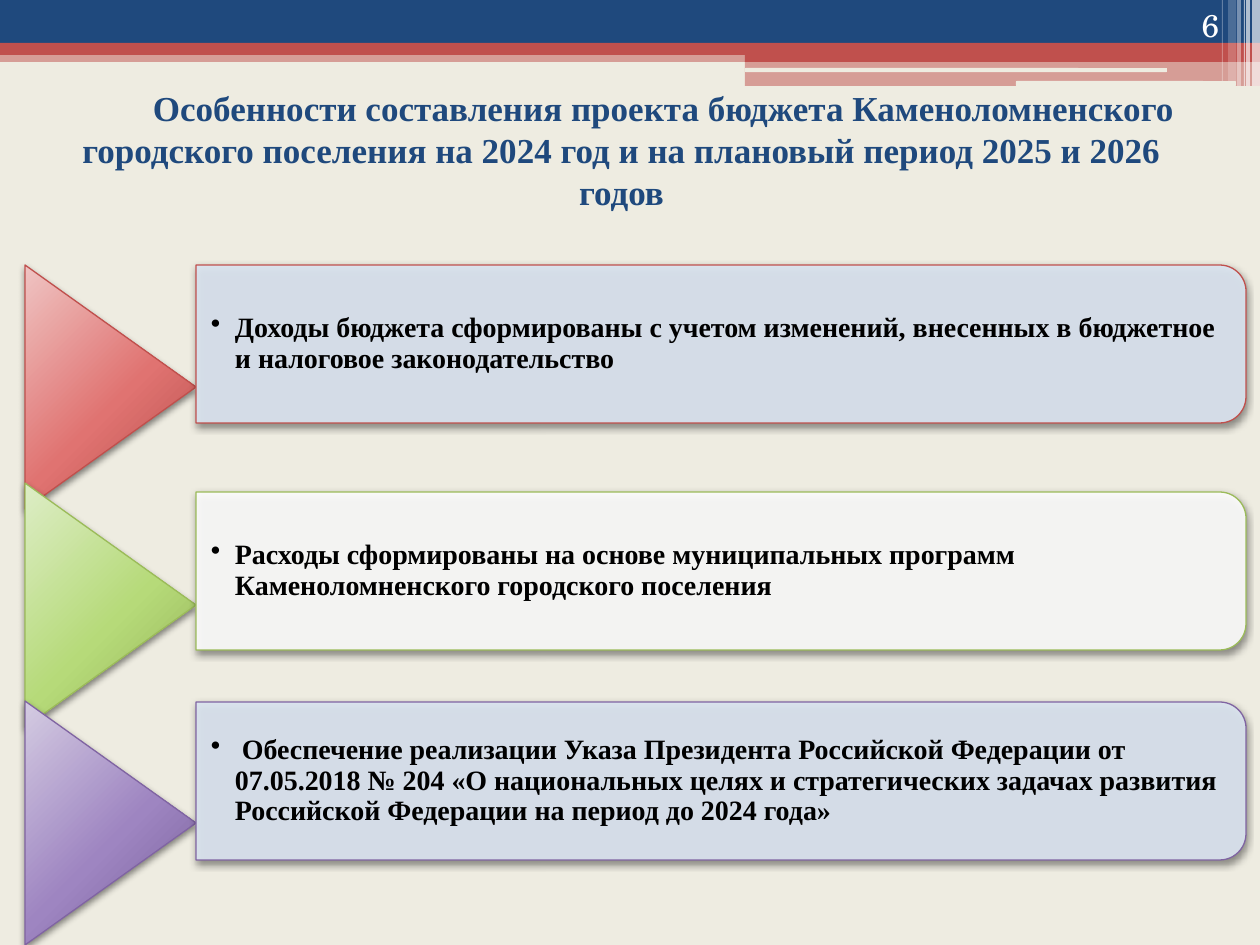
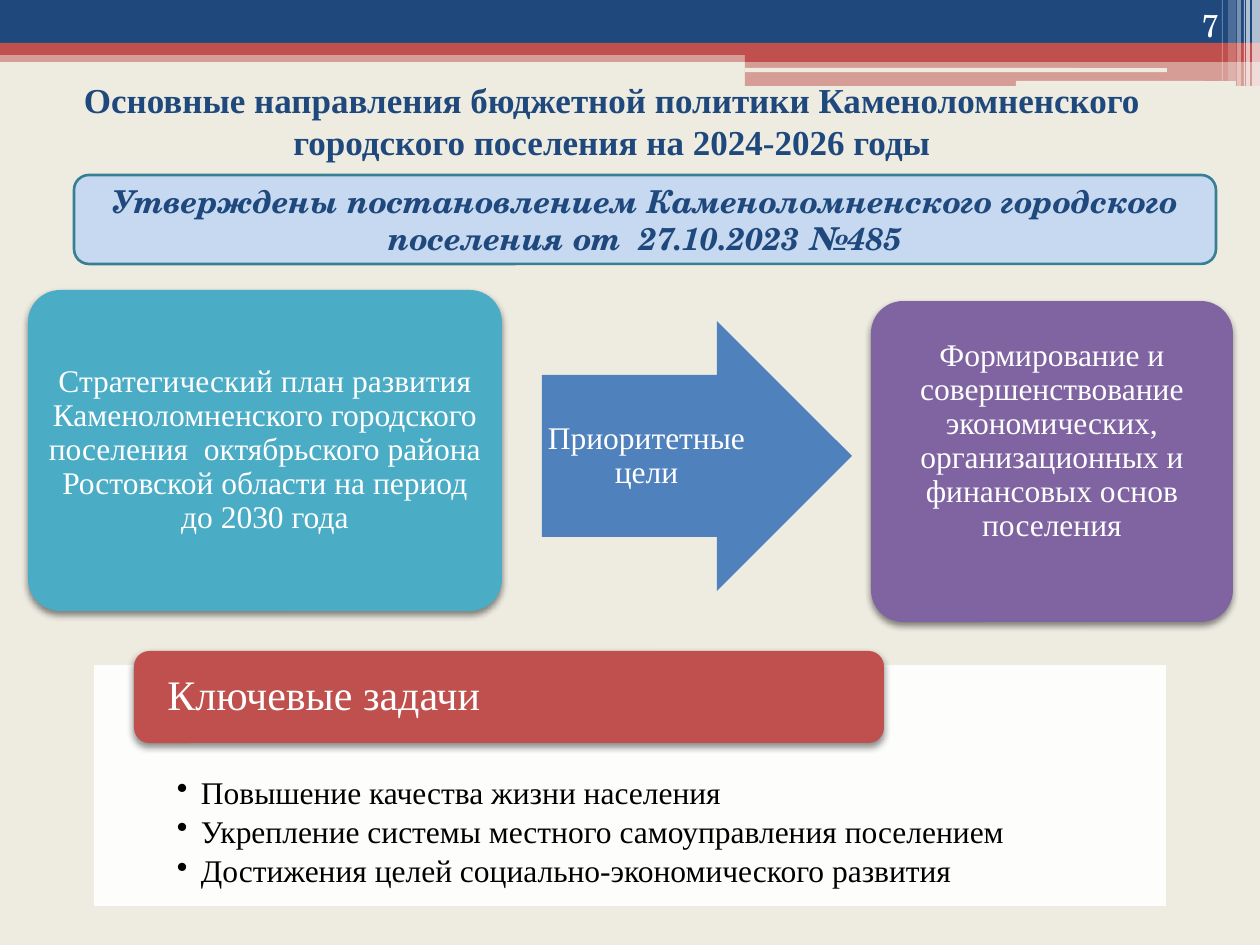
from copy import deepcopy

from lxml import etree
from pptx import Presentation, util as u
from pptx.dml.color import RGBColor
from pptx.enum import shapes as es, text as et
from pptx.oxml.ns import qn

# Palette
NAVY = RGBColor(0x1F, 0x49, 0x7D)
RED = RGBColor(0xC0, 0x50, 0x4D)
GREEN = RGBColor(0x9B, 0xBB, 0x59)
PURPLE = RGBColor(0x80, 0x64, 0xA2)
TEAL = RGBColor(0x4B, 0xAC, 0xC6)
DEEP_TEAL = RGBColor(0x37, 0x7F, 0x92)
BLUE = RGBColor(0x4F, 0x81, 0xBD)
SKY = RGBColor(0xC6, 0xD9, 0xF1)
PALE_BLUE = RGBColor(0xDC, 0xE6, 0xF2)
CREAM = RGBColor(0xEE, 0xEC, 0xE1)
WHITE = RGBColor(0xFF, 0xFF, 0xFF)
BLACK = RGBColor(0, 0, 0)
RED_SHADES = [RGBColor(0xEF, 0xC4, 0xC3), RGBColor(0xE0, 0x73, 0x71), RGBColor(0xB3, 0x4B, 0x48)]
GREEN_SHADES = [RGBColor(0xDD, 0xED, 0xC6), RGBColor(0xB6, 0xDA, 0x79), RGBColor(0x90, 0xAE, 0x53)]
PURPLE_SHADES = [RGBColor(0xD4, 0xCB, 0xE2), RGBColor(0x9E, 0x85, 0xC1), RGBColor(0x77, 0x5D, 0x97)]
SHADE_POSITIONS = (0, 0.55, 1)

# Text formats
SERIF, SCHOOL = "Times New Roman", "TeX Gyre Schola"
TITLE = {"name": SERIF, "size": u.Pt(20), "bold": True}
POINT = {"name": SERIF, "size": u.Pt(16), "bold": True}
BODY = {"name": SERIF, "size": u.Pt(18)}
HEADING = {"name": SERIF, "size": u.Pt(24)}
NUMBER = {"name": SCHOOL, "size": u.Pt(18)}
NOTICE = {"name": SCHOOL, "size": u.Pt(18), "bold": True, "italic": True}

SHAPE = es.MSO_SHAPE
CENTER, LEFT, RIGHT = et.PP_ALIGN.CENTER, et.PP_ALIGN.LEFT, et.PP_ALIGN.RIGHT
TOP, MIDDLE, BOTTOM = et.MSO_ANCHOR.TOP, et.MSO_ANCHOR.MIDDLE, et.MSO_ANCHOR.BOTTOM

PX_PER_INCH = 126
BULLET_INDENT = 24
LINE_HEIGHT = 40

# Header bands: preset, box, colour, opacity in percent
BANDS = [
    (SHAPE.RECTANGLE, (0, 50, 1260, 12), RED, 50),
    (SHAPE.RECTANGLE, (0, 0, 1260, 43), NAVY, 100),
    (SHAPE.RECTANGLE, (0, 43, 1260, 12), RED, 100),
    (SHAPE.RECTANGLE, (745, 49, 515, 13), RED, 100),
    (SHAPE.RECTANGLE, (745, 61, 515, 25), RED, 50),
    (SHAPE.ROUNDED_RECTANGLE, (745, 68, 422, 4), CREAM, 100),
    (SHAPE.ROUNDED_RECTANGLE, (1016, 81, 220, 5), CREAM, 100),
]
# Light stripes at the right end: left, width, height, opacity
STRIPES = [(1252, 8, 86, 65), (1246, 4, 86, 65), (1244, 1, 86, 60),
           (1237, 4, 86, 40), (1228, 8, 81, 20), (1222, 1, 81, 30)]


def px(n):
    return u.Emu(round(n * 914400 / PX_PER_INCH))


def add_block(slide, preset, box, fill, opacity=100, line=None, line_pt=0.75,
              shadow=False, corner=None, turned=False):
    """Preset shape in a visible box; a turned one is rotated by 90 degrees."""
    left, top, width, height = box
    if turned:
        shift = (width - height) / 2
        left, top, width, height = left + shift, top - shift, height, width
    block = slide.shapes.add_shape(preset, px(left), px(top), px(width), px(height))
    if turned:
        block.rotation = 90
    if corner is not None:
        block.adjustments[0] = corner
    block.shadow.inherit = False
    if isinstance(fill, list):
        shade(block, fill)
    else:
        block.fill.solid()
        block.fill.fore_color.rgb = fill
    spPr = block.element.spPr
    if opacity < 100:
        color = spPr.find(qn("a:solidFill"))[0]
        etree.SubElement(color, qn("a:alpha"), val=str(opacity * 1000))
    if line is None:
        block.line.fill.background()
    else:
        block.line.color.rgb = line
        block.line.width = u.Pt(line_pt)
    if shadow:
        outer = etree.SubElement(spPr.find(qn("a:effectLst")), qn("a:outerShdw"),
                                 blurRad=str(u.Pt(4)), dist=str(u.Pt(2)),
                                 dir="5400000", rotWithShape="0")
        color = etree.SubElement(outer, qn("a:srgbClr"), val=str(BLACK))
        etree.SubElement(color, qn("a:alpha"), val="45000")
    return block


def shade(block, shades):
    block.fill.gradient()
    block.fill.gradient_angle = 45
    first = block.element.spPr.find(".//" + qn("a:gs"))
    first.addnext(deepcopy(first))
    for stop, color, position in zip(block.fill.gradient_stops, shades, SHADE_POSITIONS):
        stop.color.rgb = color
        stop.position = position


def write(holder, lines, style, color, align=CENTER, anchor=MIDDLE,
          insets=(12, 6, 12, 6), spacing=None, bullets=False, indent=0):
    frame = holder.text_frame
    frame.word_wrap = True
    frame.auto_size = et.MSO_AUTO_SIZE.NONE
    frame.vertical_anchor = anchor
    for side, inset in zip(("left", "top", "right", "bottom"), insets):
        setattr(frame, "margin_" + side, px(inset))
    for i, line in enumerate(lines):
        paragraph = frame.add_paragraph() if i else frame.paragraphs[0]
        paragraph.text = line
        paragraph.alignment = align
        if spacing:
            paragraph.line_spacing = spacing
        pPr = paragraph._p.get_or_add_pPr()
        if bullets:
            paragraph.space_after = u.Pt(3)
            pPr.set("marL", str(px(BULLET_INDENT)))
            pPr.set("indent", str(px(-BULLET_INDENT)))
            etree.SubElement(pPr, qn("a:buChar"), char="•")
        elif indent:
            pPr.set("indent", str(px(indent)))
        for run in paragraph.runs:
            for key, value in style.items():
                setattr(run.font, key, value)
            run.font.color.rgb = color


def add_label(slide, box, lines, style, color, **layout):
    label = slide.shapes.add_textbox(*map(px, box))
    write(label, lines, style, color, **layout)


def set_title(slide, box, wording, indent=0):
    title = slide.shapes.title
    title.left, title.top, title.width, title.height = map(px, box)
    write(title, [wording], TITLE, NAVY, insets=(12, 6, 12, 6 + LINE_HEIGHT), indent=indent)


def add_page_number(slide, number):
    add_label(slide, (1126, 0, 105, 50), [str(number)], NUMBER, WHITE,
              align=RIGHT, anchor=BOTTOM)


def dress_layout(layout, slide):
    """Draw the header on a slide, then move it behind the layout's placeholders."""
    layout.background.fill.solid()
    layout.background.fill.fore_color.rgb = CREAM
    stripes = [(SHAPE.RECTANGLE, (left, 0, width, height), WHITE, opacity)
               for left, width, height, opacity in STRIPES]
    for i, band in enumerate(BANDS + stripes):
        element = add_block(slide, *band).element
        element.nvSpPr.cNvPr.set("id", str(100 + i))
        layout.shapes.element.insert(2 + i, element)


def fill_features(slide):
    set_title(slide, (44, 106, 1155, 127),
              "Особенности составления проекта бюджета Каменоломненского городского "
              "поселения на 2024 год и на плановый период 2025 и 2026 годов", indent=84)
    # Feature rows: bar top, bar fill, line, arrowhead shades, wording
    features = [
        (265, PALE_BLUE, RED, RED_SHADES,
         "Доходы бюджета сформированы с учетом изменений, внесенных в бюджетное "
         "и налоговое законодательство"),
        (492, WHITE, GREEN, GREEN_SHADES,
         "Расходы сформированы на основе муниципальных программ "
         "Каменоломненского городского поселения"),
        (702, PALE_BLUE, PURPLE, PURPLE_SHADES,
         " Обеспечение реализации Указа Президента Российской Федерации от 07.05.2018 "
         "№ 204 «О национальных целях и стратегических задачах развития Российской "
         "Федерации на период до 2024 года»"),
    ]
    for i, (top, fill, line, shades, wording) in enumerate(features):
        add_block(slide, SHAPE.ISOSCELES_TRIANGLE, (25, 265 + 218 * i, 171, 244), shades,
                  line=line, shadow=True, turned=True)
        add_block(slide, SHAPE.ROUND_2_SAME_RECTANGLE, (196, top, 1050, 158), fill,
                  opacity=90, line=line, shadow=True, turned=True)
        add_label(slide, (196, top + 7, 1042, 144), [wording], POINT, BLACK, align=LEFT,
                  insets=(15, 1, 1, 1), spacing=0.9, bullets=True)


def fill_directions(slide):
    set_title(slide, (45, 86, 1134, 109),
              "Основные направления бюджетной политики Каменоломненского "
              "городского поселения на 2024-2026 годы")
    # Key tasks
    tasks = add_block(slide, SHAPE.RECTANGLE, (94, 665, 1072, 241), WHITE, opacity=90)
    write(tasks, ["Повышение качества жизни населения",
                  "Укрепление системы местного самоуправления поселением",
                  "Достижения целей социально-экономического развития"],
          BODY, BLACK, align=LEFT, anchor=TOP, insets=(83, 112, 83, 18),
          spacing=0.9, bullets=True)
    heading = add_block(slide, SHAPE.ROUNDED_RECTANGLE, (134, 651, 750, 92), RED, shadow=True)
    write(heading, ["Ключевые задачи"], HEADING, WHITE, align=LEFT,
          insets=(29, 0, 29, 0), spacing=0.9)
    # From the plan through its priorities to the outcome
    plan = add_block(slide, SHAPE.ROUNDED_RECTANGLE, (28, 290, 474, 321), TEAL,
                     shadow=True, corner=0.1)
    write(plan, ["Стратегический план развития Каменоломненского городского поселения  "
                 "октябрьского района Ростовской области на период\vдо 2030 года"],
          BODY, WHITE, insets=(9, 9, 9, 9), spacing=0.9)
    priorities = add_block(slide, SHAPE.RIGHT_ARROW, (542, 321, 310, 270), BLUE)
    priorities.adjustments[0] = 0.6
    write(priorities, ["Приоритетные цели"], BODY, WHITE, insets=(0, 0, 20, 0), spacing=0.9)
    outcome = add_block(slide, SHAPE.ROUNDED_RECTANGLE, (871, 301, 362, 321), PURPLE,
                        shadow=True, corner=0.1)
    write(outcome, ["Формирование и совершенствование экономических, организационных "
                    "и финансовых основ поселения"],
          BODY, WHITE, insets=(9, 9, 9, 9 + LINE_HEIGHT), spacing=0.9)
    # Approval notice
    notice = add_block(slide, SHAPE.ROUNDED_RECTANGLE, (74, 175, 1142, 89), SKY,
                       line=DEEP_TEAL, line_pt=1.5)
    write(notice, ["Утверждены постановлением Каменоломненского городского "
                   "поселения от  27.10.2023 №485"], NOTICE, NAVY)


def main():
    prs = Presentation()
    prs.slide_width, prs.slide_height = px(1260), px(945)
    layout = prs.slide_layouts[5]
    for number, fill_slide in enumerate((fill_features, fill_directions), start=6):
        slide = prs.slides.add_slide(layout)
        if number == 6:
            dress_layout(layout, slide)
        fill_slide(slide)
        add_page_number(slide, number)
    prs.save("out.pptx")


if __name__ == "__main__":
    main()
